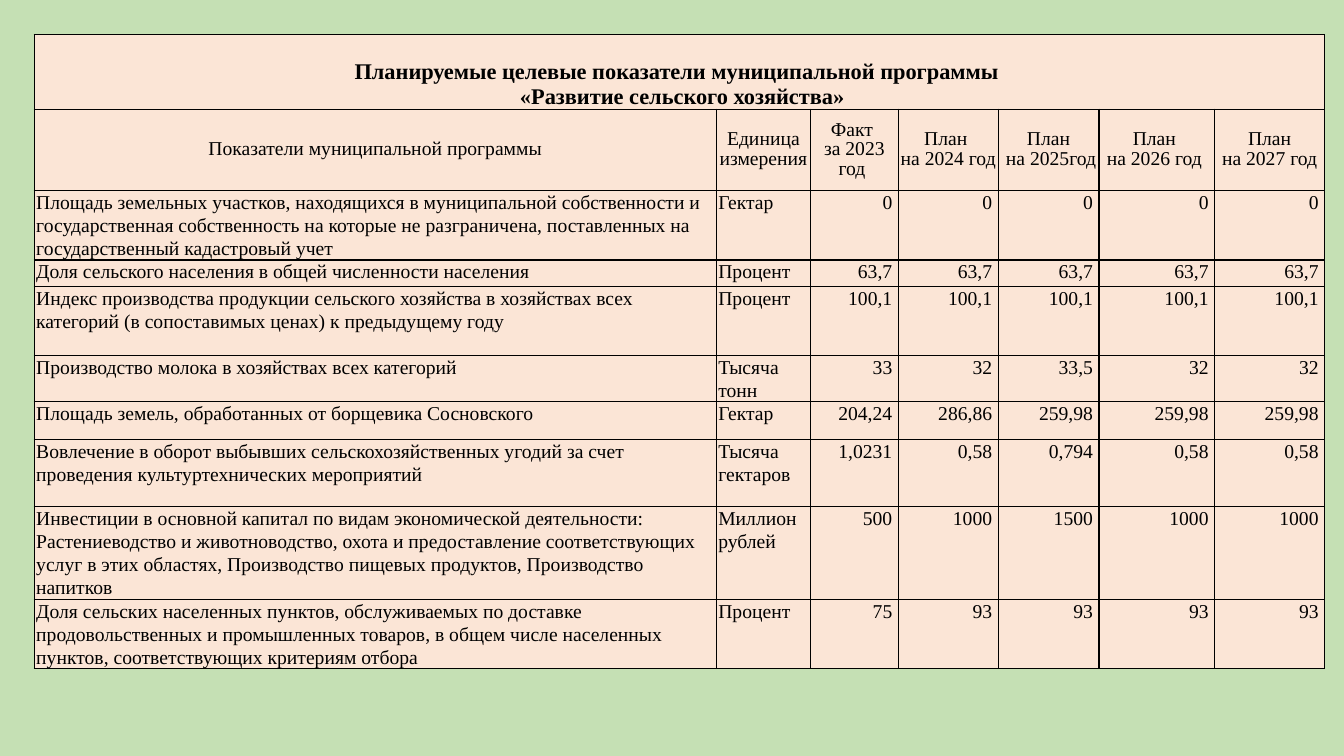
from pptx import Presentation
from pptx.dml.color import RGBColor
from pptx.enum.text import MSO_ANCHOR, PP_ALIGN
from pptx.oxml import parse_xml
from pptx.oxml.ns import nsdecls
from pptx.util import Pt

LEFT, MID, RIGHT = PP_ALIGN.LEFT, PP_ALIGN.CENTER, PP_ALIGN.RIGHT
TOP, CENTER, BOTTOM = MSO_ANCHOR.TOP, MSO_ANCHOR.MIDDLE, MSO_ANCHOR.BOTTOM
GREEN = RGBColor(0xC5, 0xE0, 0xB4)
PEACH = RGBColor(0xFB, 0xE5, 0xD6)
BLACK = RGBColor(0, 0, 0)
FONT = "Times New Roman"

TITLE = "Планируемые целевые показатели муниципальной программы \n «Развитие сельского хозяйства»"
HEADS = [
    "Показатели муниципальной программы", "Единица измерения",
    "Факт \nза 2023 год ", "План \nна 2024 год ", "План\n на 2025год ",
    "План \nна 2026 год ", "План\n на 2027 год ",
]
GOALS = [
    ("Площадь земельных участков, находящихся в муниципальной собственности и государственная собственность на которые не разграничена, поставленных на государственный кадастровый учет",
     "Гектар", "0", "0", "0", "0", "0"),
    ("Доля сельского населения в общей численности населения",
     "Процент", "63,7", "63,7", "63,7", "63,7", "63,7"),
    ("Индекс производства продукции сельского хозяйства в хозяйствах всех категорий (в сопоставимых ценах) к предыдущему году",
     "Процент", "100,1", "100,1", "100,1", "100,1", "100,1"),
    ("Производство молока в хозяйствах всех категорий",
     "Тысяча тонн", "33", "32", "33,5", "32", "32"),
    ("Площадь земель, обработанных от борщевика Сосновского",
     "Гектар", "204,24", "286,86", "259,98", "259,98", "259,98"),
    ("Вовлечение в оборот выбывших сельскохозяйственных угодий за счет проведения культуртехнических мероприятий",
     "Тысяча гектаров", "1,0231", "0,58", "0,794", "0,58", "0,58"),
    ("Инвестиции в основной капитал по видам экономической деятельности: Растениеводство и животноводство, охота и предоставление соответствующих услуг в этих областях, Производство пищевых продуктов, Производство напитков",
     "Миллион рублей", "500", "1000", "1500", "1000", "1000"),
    ("Доля сельских населенных пунктов, обслуживаемых по доставке продовольственных и промышленных товаров, в общем числе населенных пунктов, соответствующих критериям отбора",
     "Процент", "75", "93", "93", "93", "93"),
]
WIDTHS = [487.2, 67.3, 62.7, 71.4, 72, 82.6, 78.6]
HEIGHTS = [53.3, 58, 49.7, 19, 49.2, 33, 27.2, 47.6, 66, 49.6]


def edge(cell):
    props = cell._tc.get_or_add_tcPr()
    for i, side in enumerate(("lnL", "lnR", "lnT", "lnB")):
        props.insert(i, parse_xml(
            f'<a:{side} {nsdecls("a")} w="{Pt(1)}"><a:solidFill>'
            f'<a:srgbClr val="{BLACK}"/></a:solidFill></a:{side}>'))


def fill(cell, text, align, anchor, size=14, bold=False, space=1.0, pads=(0.7, 0.7)):
    cell.fill.solid()
    cell.fill.fore_color.rgb = PEACH
    cell.margin_left, cell.margin_right = map(Pt, pads)
    cell.margin_top = cell.margin_bottom = 0
    cell.vertical_anchor = anchor
    cell.text = text
    for par in cell.text_frame.paragraphs:
        par.alignment = align
        par.line_spacing = space
        par.font.name = FONT
        par.font.size = Pt(size)
        par.font.bold = bold
        par.font.color.rgb = BLACK
    edge(cell)


deck = Presentation()
deck.slide_width, deck.slide_height = Pt(960), Pt(540)
slide = deck.slides.add_slide(deck.slide_layouts[6])
back = slide.background.fill
back.solid()
back.fore_color.rgb = GREEN

table = slide.shapes.add_table(
    len(HEIGHTS), len(WIDTHS), Pt(24.5), Pt(24.7),
    Pt(sum(WIDTHS)), Pt(sum(HEIGHTS))).table
for col, width in zip(table.columns, WIDTHS):
    col.width = Pt(width)
for row, height in zip(table.rows, HEIGHTS):
    row.height = Pt(height)

table.cell(0, 0).merge(table.cell(0, len(WIDTHS) - 1))
fill(table.cell(0, 0), TITLE, MID, BOTTOM, size=16, bold=True)
for c in range(1, len(WIDTHS)):
    edge(table.cell(0, c))
for c, head in enumerate(HEADS):
    fill(table.cell(1, c), head, MID, CENTER, space=0.9)
for r, goal in enumerate(GOALS, 2):
    for c, text in enumerate(goal):
        align, pads = (LEFT, (1.4, 0)) if c < 2 else (RIGHT, (0, 4.3))
        fill(table.cell(r, c), text, align, TOP, space=1.07, pads=pads)

deck.save("out.pptx")
